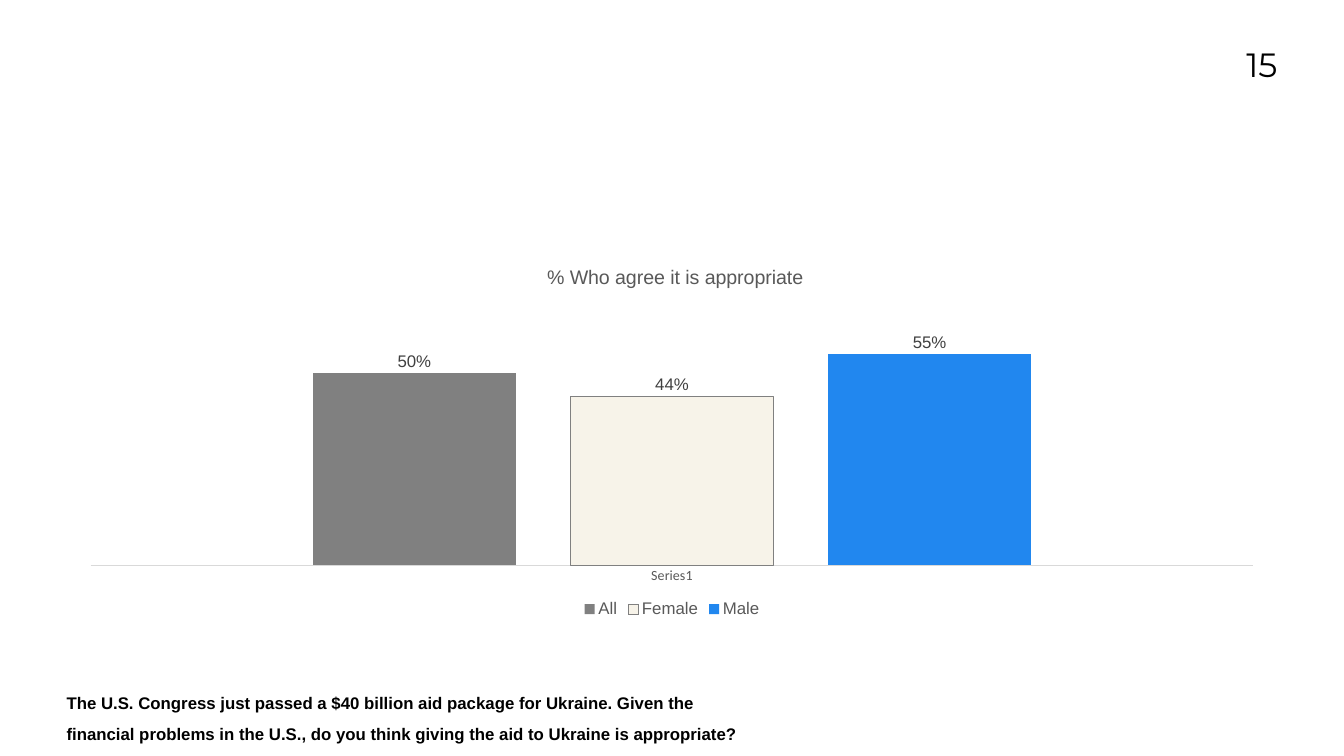
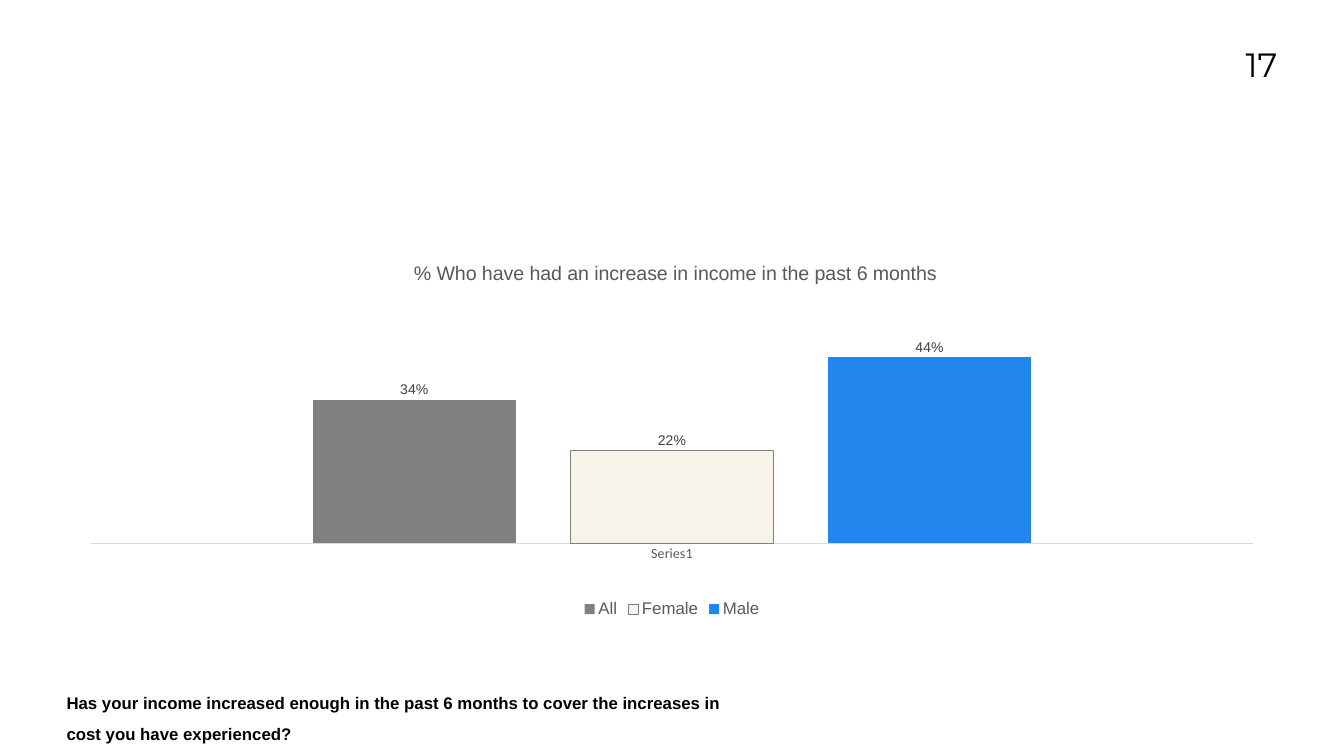
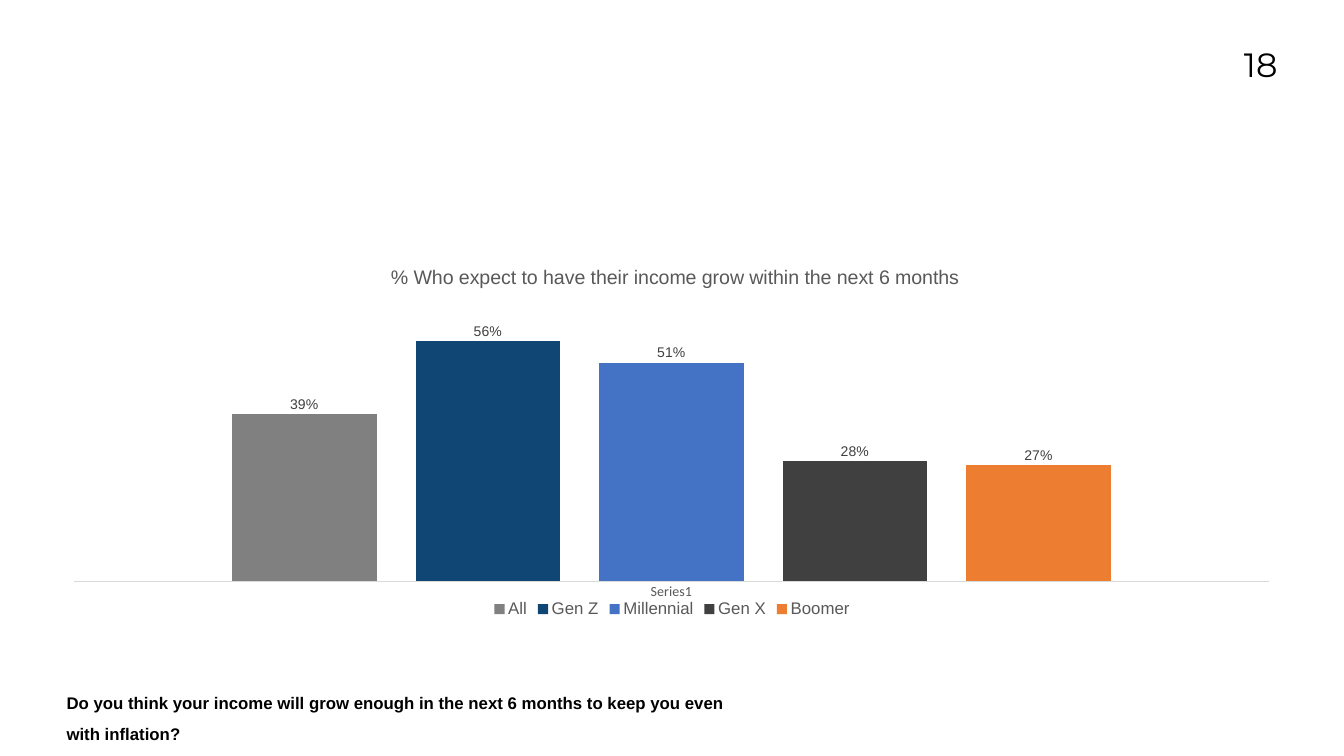
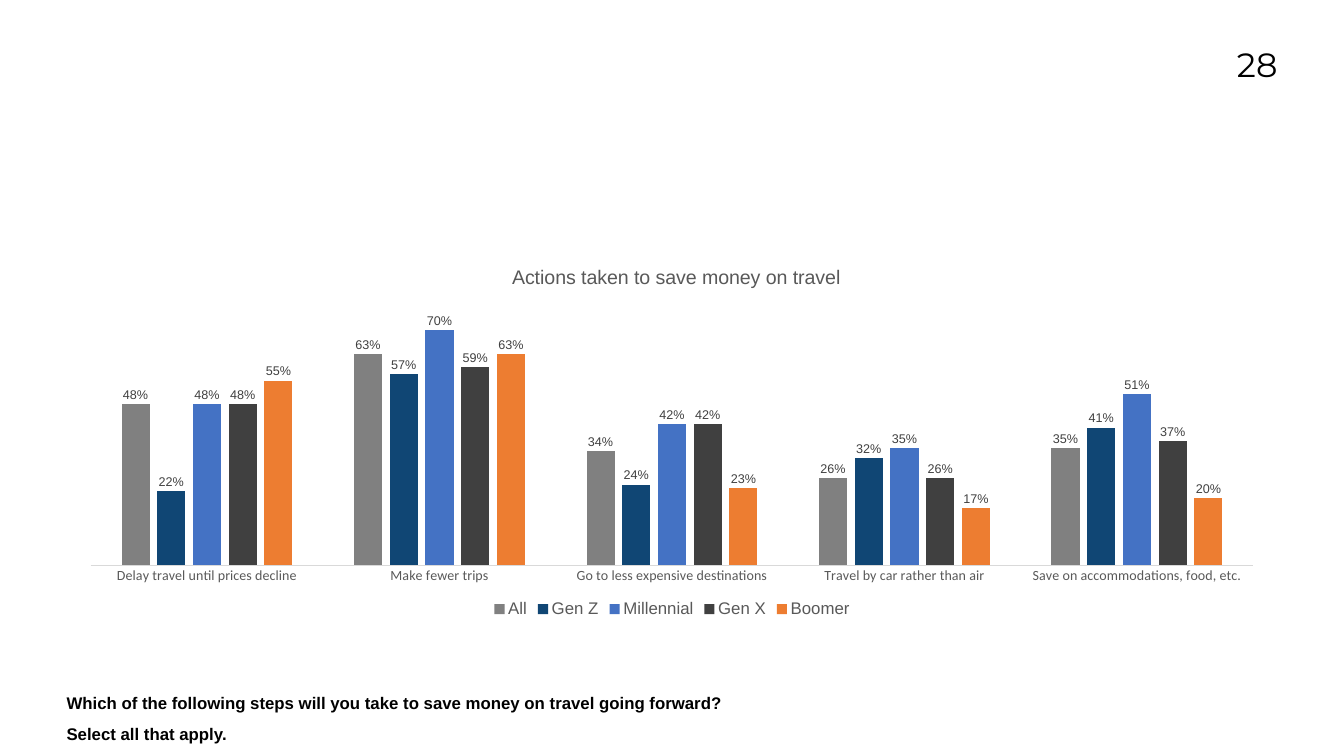
from dataclasses import dataclass

from lxml import etree
from pptx import Presentation
from pptx import util as u
from pptx.chart.data import CategoryChartData
from pptx.dml.color import RGBColor
from pptx.enum import chart as charts, text
from pptx.oxml import ns


# Theme: colours, fonts and type sizes
@dataclass(frozen=True)
class Theme:
    ink: str = "000000"
    grey_text: str = "595959"
    label_text: str = "404040"
    axis_line: str = "D9D9D9"
    body: str = "Arial"
    axis: str = "Calibri"
    number: str = "Montserrat"
    number_size: int = 48
    title_size: int = 28
    text_size: int = 24
    axis_size: int = 20
    base_size: int = 10


theme = Theme()
group_colors = {"All": "808080", "Female": "F7F3E9", "Male": "2187EF", "Gen Z": "104674",
                "Millennial": "4472C4", "Gen X": "404040", "Boomer": "ED7D31"}
outlined_groups = {"Female": "808080"}


def format_font(font, name, size, color, bold=False):
    for attribute, value in {"name": name, "size": u.Pt(size), "bold": bold}.items():
        setattr(font, attribute, value)
    font.color.rgb = RGBColor.from_string(color)


def place_in_chart(parent, index, **values):
    """Fix a chart part at shares of the chart's size."""
    for old_layout in parent.findall(ns.qn("c:layout")):
        parent.remove(old_layout)
    layout = etree.Element(ns.qn("c:layout"))
    manual = etree.SubElement(layout, ns.qn("c:manualLayout"))
    for tag, value in values.items():
        etree.SubElement(manual, ns.qn(f"c:{tag}")).set("val", str(value))
    parent.insert(index, layout)


# Slide contents; title_at and plot are shares of the chart's size
standard_plot = (0.02, 0.135, 0.96, 0.714)
pages = [
    dict(number="15", title="% Who agree it is appropriate", title_at=(0.394, 0.04),
         plot=standard_plot, maximum=0.7, label_size=24, categories=["Series1"],
         values={"All": [0.5], "Female": [0.44], "Male": [0.55]},
         question="The U.S. Congress just passed a $40 billion aid package for Ukraine. "
                  "Given the financial problems in the U.S., do you think giving the aid "
                  "to Ukraine is appropriate?"),
    dict(number="17", title="% Who have had an increase in income in the past 6 months",
         title_at=(0.284, 0.03), plot=(0.02, 0.117, 0.96, 0.673), maximum=0.6,
         label_size=20, categories=["Series1"],
         values={"All": [0.34], "Female": [0.22], "Male": [0.44]},
         question="Has your income increased enough in the past 6 months to cover the "
                  "increases in cost you have experienced?"),
    dict(number="18", title="% Who expect to have their income grow within the next 6 months",
         title_at=(0.265, 0.04), plot=(0.006, 0.095, 0.987, 0.796), maximum=0.7,
         label_size=20, categories=["Series1"],
         values={"All": [0.39], "Gen Z": [0.56], "Millennial": [0.51],
                 "Gen X": [0.28], "Boomer": [0.27]},
         question="Do you think your income will grow enough in the next 6 months to keep "
                  "you even with inflation?"),
    dict(number="28", title="Actions taken to save money on travel", title_at=(0.365, 0.04),
         plot=standard_plot, maximum=0.8, label_size=18,
         categories=["Delay travel until prices decline", "Make fewer trips",
                     "Go to less expensive destinations", "Travel by car rather than air",
                     "Save on accommodations, food, etc."],
         values={"All": [0.48, 0.63, 0.34, 0.26, 0.35],
                 "Gen Z": [0.22, 0.57, 0.24, 0.32, 0.41],
                 "Millennial": [0.48, 0.7, 0.42, 0.35, 0.51],
                 "Gen X": [0.48, 0.59, 0.42, 0.26, 0.37],
                 "Boomer": [0.55, 0.63, 0.23, 0.17, 0.2]},
         question="Which of the following steps will you take to save money on travel going "
                  "forward? Select all that apply."),
]

# Slide size and shared frame
presentation = Presentation()
presentation.slide_width, presentation.slide_height = u.Inches(26.67), u.Inches(15)
margin = u.Inches(1.32)
content_width = presentation.slide_width - 2 * margin
number_width = u.Inches(2.25)
number_box = (presentation.slide_width - margin - number_width, u.Inches(0.88),
              number_width, u.Inches(1.64))
chart_box = (margin, u.Inches(4.88), content_width, u.Inches(7.46))
question_box = (margin, u.Inches(13.55), u.Inches(13.5), u.Inches(0.65))

for page in pages:
    slide = presentation.slides.add_slide(presentation.slide_layouts[6])

    # Column chart
    data = CategoryChartData(number_format="0%")
    data.categories = page["categories"]
    for group, values in page["values"].items():
        data.add_series(group, values)
    chart = slide.shapes.add_chart(charts.XL_CHART_TYPE.COLUMN_CLUSTERED, *chart_box, data).chart
    format_font(chart.font, theme.axis, theme.base_size, theme.ink)

    # Chart title
    chart.has_title = True
    title = chart.chart_title
    title.include_in_layout = False
    paragraph = title.text_frame.paragraphs[0]
    run = paragraph.add_run()
    run.text = page["title"]
    format_font(run.font, theme.body, theme.title_size, theme.grey_text)
    left, top = page["title_at"]
    place_in_chart(title._element, 1, xMode="edge", yMode="edge", x=left, y=top)

    # Legend
    chart.has_legend = True
    chart.legend.position = charts.XL_LEGEND_POSITION.BOTTOM
    chart.legend.include_in_layout = False
    format_font(chart.legend.font, theme.body, theme.text_size, theme.grey_text)

    # Axes
    value_axis, category_axis = chart.value_axis, chart.category_axis
    for attribute, value in {"minimum_scale": 0, "maximum_scale": page["maximum"],
                             "has_major_gridlines": False, "visible": False}.items():
        setattr(value_axis, attribute, value)
    value_axis.tick_labels.number_format = "0%"
    value_axis.tick_labels.number_format_is_linked = False
    category_axis.major_tick_mark = charts.XL_TICK_MARK.NONE
    category_axis.format.line.color.rgb = RGBColor.from_string(theme.axis_line)
    category_axis.format.line.width = u.Pt(0.75)
    format_font(category_axis.tick_labels.font, theme.axis, theme.axis_size, theme.grey_text)

    # Columns and their labels
    plot = chart.plots[0]
    for attribute, value in {"gap_width": 219, "overlap": -27,
                             "vary_by_categories": False}.items():
        setattr(plot, attribute, value)
    for series in plot.series:
        series.format.fill.solid()
        series.format.fill.fore_color.rgb = RGBColor.from_string(group_colors[series.name])
        if series.name in outlined_groups:
            series.format.line.color.rgb = RGBColor.from_string(outlined_groups[series.name])
            series.format.line.width = u.Pt(0.75)
        for attribute, value in {"show_value": True, "number_format": "0%",
                                 "number_format_is_linked": False,
                                 "position": charts.XL_LABEL_POSITION.OUTSIDE_END}.items():
            setattr(series.data_labels, attribute, value)
        format_font(series.data_labels.font, theme.body, page["label_size"], theme.label_text)

    left, top, width, height = page["plot"]
    place_in_chart(chart._chartSpace.chart.plotArea, 0, layoutTarget="inner", xMode="edge",
                   yMode="edge", x=left, y=top, w=width, h=height)

    # Page number and survey question
    for box, words, alignment, spacing, font in (
        (number_box, page["number"], text.PP_ALIGN.RIGHT, 1.0,
         (theme.number, theme.number_size, theme.ink)),
        (question_box, page["question"], text.PP_ALIGN.LEFT, 1.5,
         (theme.body, theme.text_size, theme.ink, True)),
    ):
        frame = slide.shapes.add_textbox(*box).text_frame
        for attribute, value in {"word_wrap": True, "margin_left": 0, "margin_right": 0,
                                 "margin_top": 0, "margin_bottom": 0}.items():
            setattr(frame, attribute, value)
        paragraph = frame.paragraphs[0]
        paragraph.alignment, paragraph.line_spacing = alignment, spacing
        run = paragraph.add_run()
        run.text = words
        format_font(run.font, *font)

presentation.save("out.pptx")
